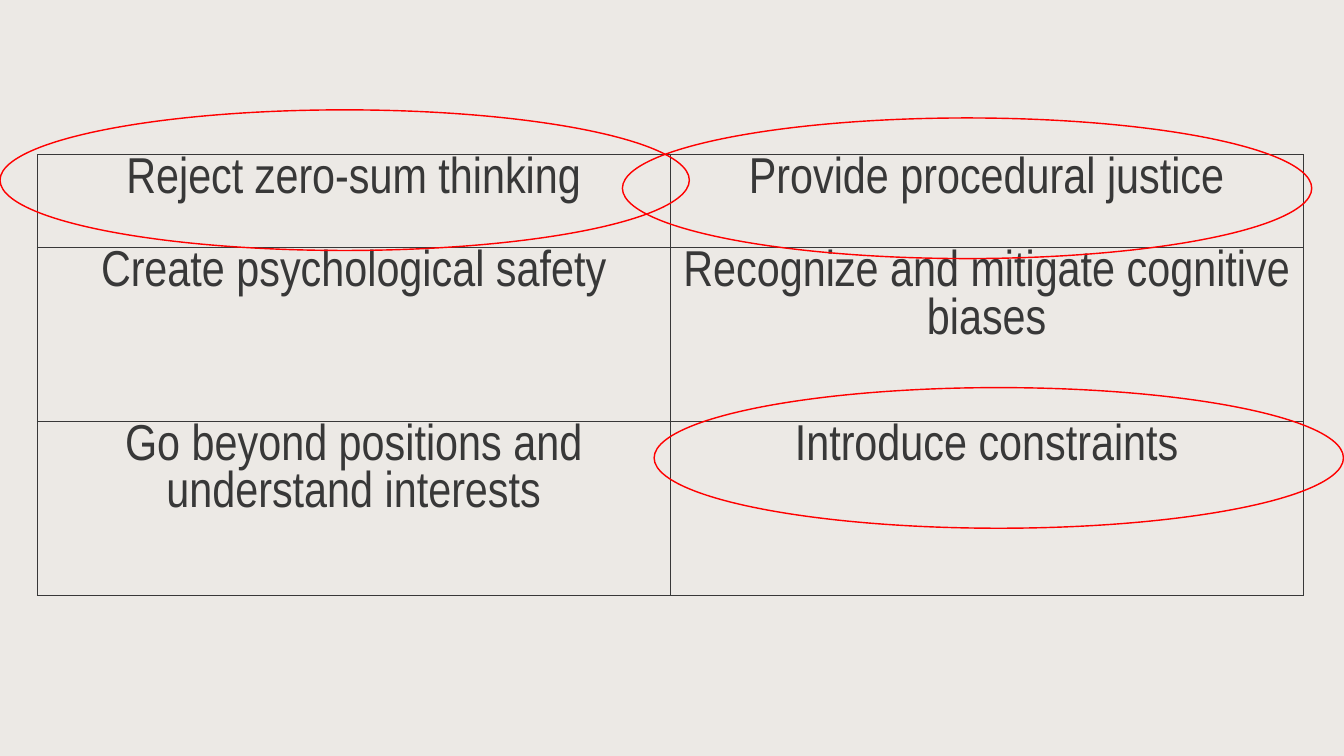
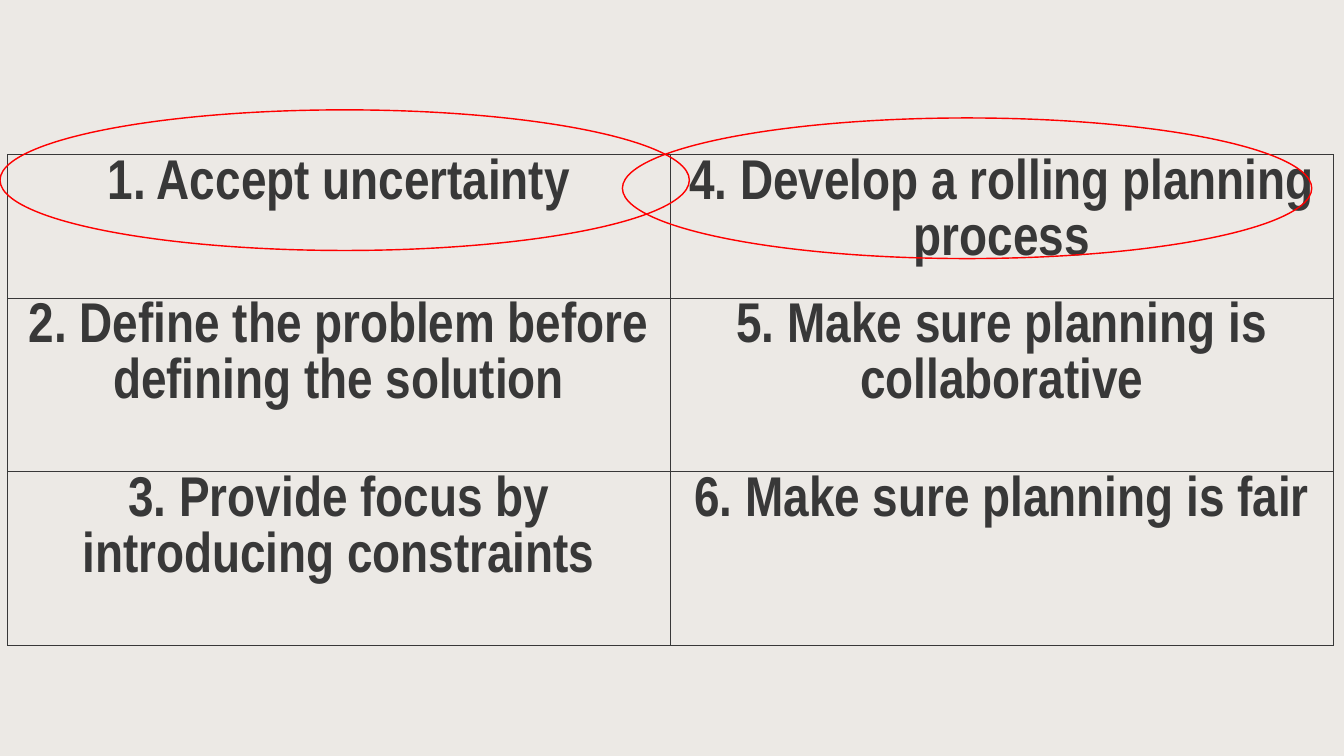
from dataclasses import dataclass

from lxml.etree import SubElement
from pptx import Presentation
from pptx.dml.color import RGBColor
from pptx.enum.shapes import MSO_SHAPE
from pptx.enum.text import PP_ALIGN
from pptx.oxml.ns import qn
from pptx.util import Inches, Pt


@dataclass(frozen=True)
class Theme:
    background: str = "ECE9E5"
    ink: str = "383838"
    highlight: str = "FF0000"
    font: str = "Arial Narrow"
    principle_size: int = 72
    planning_size: int = 80
    border_width: int = 1
    ring_width: int = 2


THEME = Theme()
SLIDE_WIDTH, SLIDE_HEIGHT = Inches(26.67), Inches(15)

# Lengths below are percentages of the slide's width or height
TABLE_TOP = 20.47
SHORT_ROW, WRAPPED_ROW, TALL_ROW = 12.27, 18.93, 23
RING_WIDTH, RING_HEIGHT = 51.29, 18.6
RING_TOP_LEFT = (0, 14.53)
RING_TOP_RIGHT = (46.31, 15.6)
RING_BOTTOM_RIGHT = (48.67, 51.27)

PRINCIPLES = [
    ["Reject zero-sum thinking", "Provide procedural justice"],
    ["Create psychological safety", "Recognize and mitigate cognitive biases"],
    ["Go beyond positions and understand interests", "Introduce constraints"],
]
PLANNING_STEPS = [
    ["1. Accept uncertainty", "4. Develop a rolling planning process"],
    ["2. Define the problem before defining the solution",
     "5. Make sure planning is collaborative"],
    ["3. Provide focus by introducing constraints",
     "6. Make sure planning is fair"],
]


def across(percent):
    return int(SLIDE_WIDTH * percent / 100)


def down(percent):
    return int(SLIDE_HEIGHT * percent / 100)


def add_cell_borders(cell):
    properties = cell._tc.get_or_add_tcPr()
    for position, side in enumerate(("a:lnL", "a:lnR", "a:lnT", "a:lnB")):
        line = SubElement(properties, qn(side), w=str(Pt(THEME.border_width)))
        fill = SubElement(line, qn("a:solidFill"))
        SubElement(fill, qn("a:srgbClr"), val=THEME.ink)
        properties.insert(position, line)  # borders precede the cell fill


def format_cell(cell, text, size, bold, line_spacing, side_margin, top_margin):
    cell.fill.background()
    add_cell_borders(cell)
    cell.margin_left = cell.margin_right = Inches(side_margin)
    cell.margin_top = cell.margin_bottom = Inches(top_margin)
    cell.text_frame.text = text
    paragraph = cell.text_frame.paragraphs[0]
    paragraph.alignment = PP_ALIGN.CENTER
    paragraph.line_spacing = line_spacing
    font = paragraph.runs[0].font
    font.name, font.size, font.bold = THEME.font, Pt(size), bold
    font.color.rgb = RGBColor.from_string(THEME.ink)


def add_text_table(slide, texts, left, width, row_heights, **cell_format):
    frame = slide.shapes.add_table(
        len(texts), len(texts[0]), across(left), down(TABLE_TOP),
        across(width), down(sum(row_heights)))
    table = frame.table
    table.first_row = table.horz_banding = False
    for row, height, row_texts in zip(table.rows, row_heights, texts):
        row.height = down(height)
        for cell, text in zip(row.cells, row_texts):
            format_cell(cell, text, **cell_format)


def add_rings(slide, positions):
    for left, top in positions:
        ring = slide.shapes.add_shape(
            MSO_SHAPE.OVAL, across(left), down(top),
            across(RING_WIDTH), down(RING_HEIGHT))
        ring.shadow.inherit = False
        ring.fill.background()
        ring.line.color.rgb = RGBColor.from_string(THEME.highlight)
        ring.line.width = Pt(THEME.ring_width)


def main():
    presentation = Presentation()
    presentation.slide_width = SLIDE_WIDTH
    presentation.slide_height = SLIDE_HEIGHT

    # Shared background
    background = presentation.slide_master.background.fill
    background.solid()
    background.fore_color.rgb = RGBColor.from_string(THEME.background)
    blank = presentation.slide_layouts.get_by_name("Blank")

    # Negotiation principles
    slide = presentation.slides.add_slide(blank)
    add_text_table(
        slide, PRINCIPLES, left=2.77, width=94.19,
        row_heights=[SHORT_ROW, TALL_ROW, TALL_ROW],
        size=THEME.principle_size, bold=False, line_spacing=1.0,
        side_margin=0.1, top_margin=0.05)
    add_rings(slide, [RING_TOP_RIGHT, RING_BOTTOM_RIGHT, RING_TOP_LEFT])

    # Planning steps
    slide = presentation.slides.add_slide(blank)
    add_text_table(
        slide, PLANNING_STEPS, left=0.56, width=98.65,
        row_heights=[WRAPPED_ROW, TALL_ROW, TALL_ROW],
        size=THEME.planning_size, bold=True, line_spacing=1.07,
        side_margin=0.07, top_margin=0)
    add_rings(slide, [RING_TOP_RIGHT, RING_TOP_LEFT])

    presentation.save("out.pptx")


if __name__ == "__main__":
    main()
